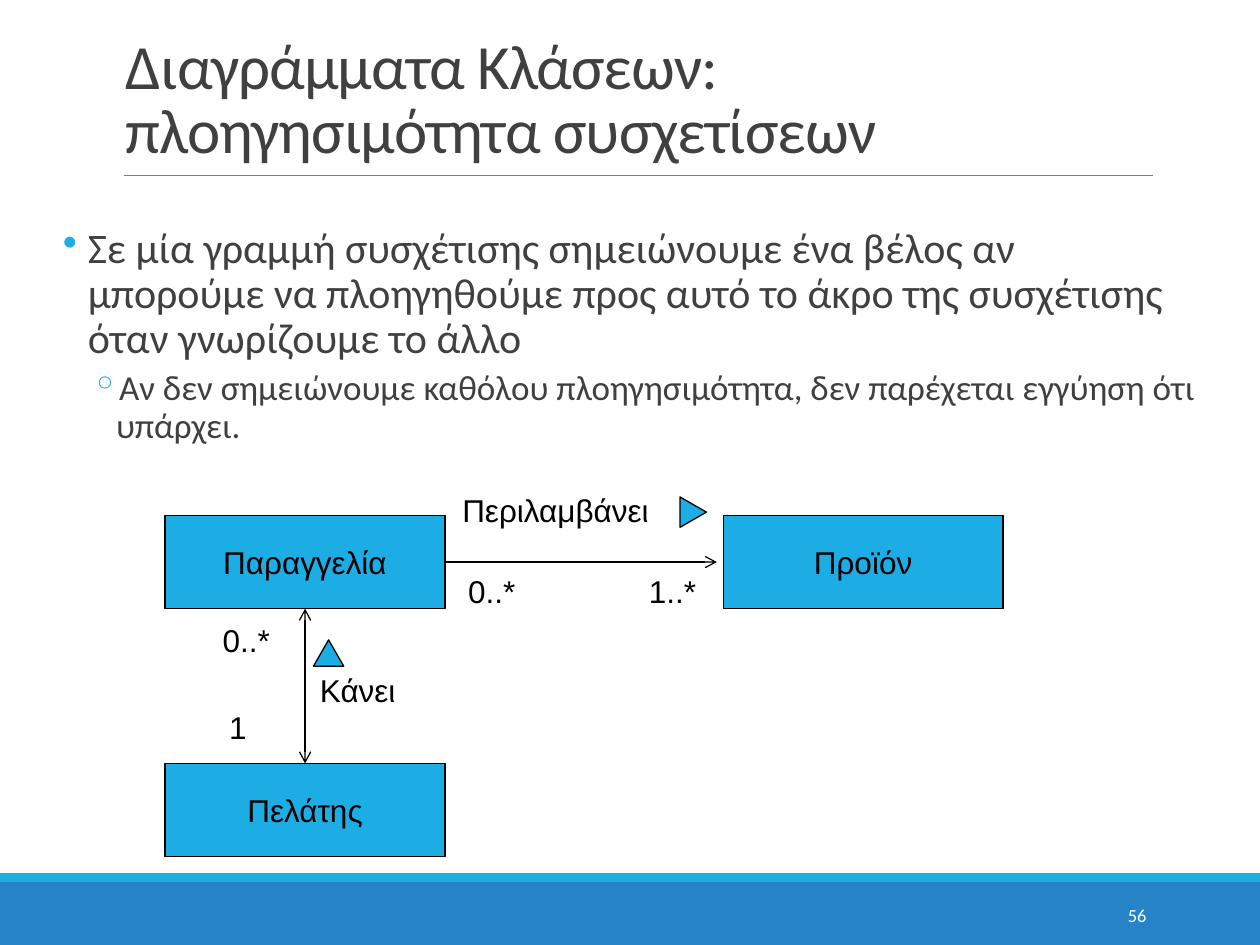
from lxml import etree
from pptx import Presentation
from pptx import util as u
from pptx.dml.color import RGBColor
from pptx.enum import shapes, text
from pptx.oxml.ns import qn

Cm, Pt = u.Cm, u.Pt
BLUE, DARK_BLUE, INK, BLACK, WHITE, GREY = (
    "1CADE4", "2683C6", "404040", "000000", "FFFFFF", "808080")

# Lengths in cm: left, top, width, height
BANDS = [((0, 17.78, 25.4, 1.27), DARK_BLUE), ((0, 17.6, 25.4, 0.18), BLUE)]
TITLE = "Διαγράμματα Κλάσεων: πλοηγησιμότητα συσχετίσεων"
BODY = [  # text, size, bullet, indent in cm, paragraph format
    ("Σε μία γραμμή συσχέτισης σημειώνουμε ένα βέλος αν μπορούμε να πλοηγηθούμε "
     "προς αυτό το άκρο της συσχέτισης όταν γνωρίζουμε το άλλο", 24, "•", 0.5,
     dict(line_spacing=0.9, space_before=Pt(12), space_after=Pt(2))),
    ("Αν δεν σημειώνουμε καθόλου πλοηγησιμότητα, δεν παρέχεται εγγύηση ότι υπάρχει.",
     20, "◦", 1.07,
     dict(level=1, line_spacing=0.9, space_before=Pt(2), space_after=Pt(4))),
]
HANGING = 0.5
PAGE = "56"

COLS, ROWS = (3.33, 14.58), (10.39, 15.39)
BOX_W, BOX_H = 5.64, 1.88
CLASSES = {"Παραγγελία": (0, 0), "Προϊόν": (1, 0), "Πελάτης": (0, 1)}
LABEL_H = 1.02
LABELS = [  # text, left, top, width
    ("Περιλαμβάνει", 9.07, 9.78, 4.27),
    ("0..*", 9.19, 11.4, 1.47),
    ("1..*", 12.83, 11.4, 1.47),
    ("0..*", 4.24, 12.4, 1.47),
    ("Κάνει", 6.2, 13.41, 2.03),
    ("1", 4.37, 14.15, 0.86),
]
READING_MARKS = [((13.67, 10.06, 0.61, 0.53), 90), ((6.32, 12.9, 0.61, 0.53), 0)]
ARROW_END_X = 14.45

prs = Presentation()
prs.slide_width, prs.slide_height = Cm(25.4), Cm(19.05)
s = prs.slides.add_slide(prs.slide_layouts[6])


def rgb(color):
    return RGBColor.from_string(color)


def set_attrs(obj, values):
    for name, value in values.items():
        setattr(obj, name, value)


def add_shape(kind, at, fill, line=None):
    sp = s.shapes.add_shape(kind, *map(Cm, at))
    sp.shadow.inherit = False
    sp.fill.solid()
    sp.fill.fore_color.rgb = rgb(fill)
    if line:
        sp.line.color.rgb, sp.line.width = rgb(line), Pt(0.75)
    else:
        sp.line.fill.background()
    return sp


def add_box(at, **frame):
    sp = s.shapes.add_textbox(*map(Cm, at))
    set_attrs(sp.text_frame, frame)
    return sp.text_frame


def write(p, words, size, font, color, **fmt):
    set_attrs(p, fmt)
    r = p.add_run()
    r.text = words
    set_attrs(r.font, dict(size=Pt(size), name=font))
    r.font.color.rgb = rgb(color)
    return r


def add_bullet(p, char, indent):
    pPr = p._p.get_or_add_pPr()
    pPr.set("marL", str(Cm(indent)))
    pPr.set("indent", str(-Cm(HANGING)))
    color = etree.SubElement(pPr, qn("a:buClr"))
    etree.SubElement(color, qn("a:srgbClr"), val=BLUE)
    etree.SubElement(pPr, qn("a:buChar"), char=char)


def add_line(x1, y1, x2, y2, color=BLACK, width=0.75, ends=()):
    """Draw a straight line; ends may name headEnd (start) and tailEnd (finish)."""
    c = s.shapes.add_connector(shapes.MSO_CONNECTOR.STRAIGHT, *map(Cm, (x1, y1, x2, y2)))
    c.line.color.rgb, c.line.width = rgb(color), Pt(width)
    for end in ends:
        etree.SubElement(c.line._get_or_add_ln(), qn("a:" + end), type="arrow")
    etree.SubElement(c._element.spPr, qn("a:effectLst"))
    return c


for at, color in BANDS:
    add_shape(shapes.MSO_SHAPE.RECTANGLE, at, color)
add_line(2.49, 3.53, 23.24, 3.53, GREY, 0.5)

tf = add_box((2.29, 0.28, 20.96, 3.2), word_wrap=True,
             vertical_anchor=text.MSO_ANCHOR.BOTTOM)
r = write(tf.paragraphs[0], TITLE, 36, "Calibri", INK, line_spacing=0.85)
r.font._element.set("spc", "-50")

tf = add_box((1.27, 4.45, 22.86, 5.33), word_wrap=True, margin_left=0, margin_right=0)
for i, (words, size, char, indent, fmt) in enumerate(BODY):
    p = tf.add_paragraph() if i else tf.paragraphs[0]
    write(p, words, size, "Calibri", INK, **fmt)
    add_bullet(p, char, indent)

tf = add_box((20.62, 17.93, 2.74, 1.02), word_wrap=True,
             vertical_anchor=text.MSO_ANCHOR.MIDDLE)
write(tf.paragraphs[0], PAGE, 10.5, "Calibri", WHITE, alignment=text.PP_ALIGN.RIGHT)

boxes = {}
for name, (col, row) in CLASSES.items():
    sp = add_shape(shapes.MSO_SHAPE.RECTANGLE, (COLS[col], ROWS[row], BOX_W, BOX_H),
                   BLUE, BLACK)
    set_attrs(sp.text_frame, dict(word_wrap=False, vertical_anchor=text.MSO_ANCHOR.MIDDLE))
    write(sp.text_frame.paragraphs[0], name, 18, "Arial", BLACK,
          alignment=text.PP_ALIGN.CENTER)
    boxes[name] = sp

mid_x, mid_y = COLS[0] + BOX_W / 2, ROWS[0] + BOX_H / 2
includes = add_line(COLS[0] + BOX_W, mid_y, ARROW_END_X, mid_y, ends=["tailEnd"])
includes.begin_connect(boxes["Παραγγελία"], 3)
makes = add_line(mid_x, ROWS[1], mid_x, ROWS[0] + BOX_H, ends=["headEnd", "tailEnd"])
makes.begin_connect(boxes["Πελάτης"], 0)
makes.end_connect(boxes["Παραγγελία"], 2)

for words, left, top, width in LABELS:
    tf = add_box((left, top, width, LABEL_H), word_wrap=False,
                 auto_size=text.MSO_AUTO_SIZE.SHAPE_TO_FIT_TEXT)
    write(tf.paragraphs[0], words, 18, "Arial", BLACK)

for at, angle in READING_MARKS:
    add_shape(shapes.MSO_SHAPE.ISOSCELES_TRIANGLE, at, BLUE, BLACK).rotation = angle

prs.save("out.pptx")
